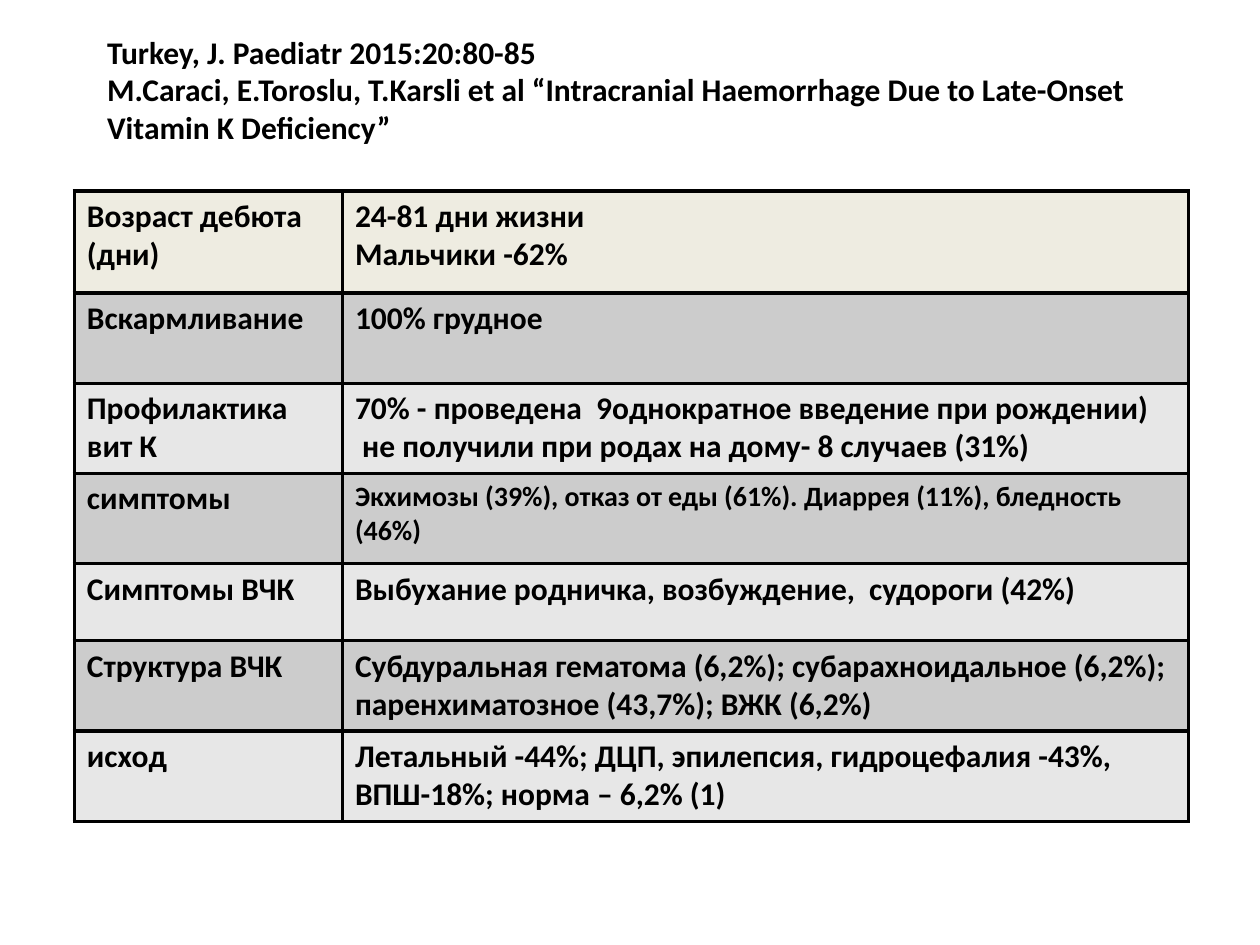
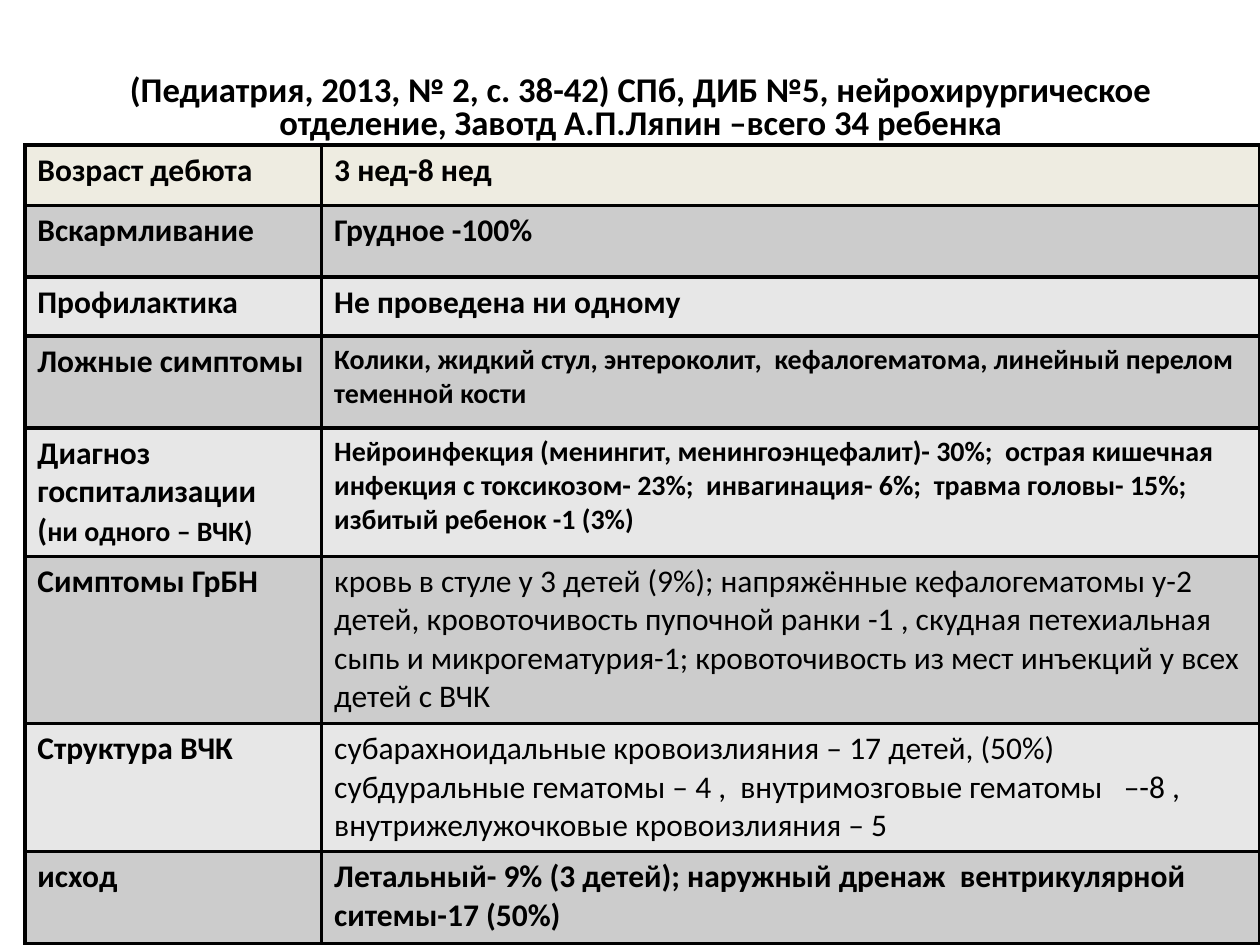
"""Build two slides of tables on late vitamin K deficiency bleeding."""
from lxml import etree
from pptx import Presentation
from pptx.dml.color import RGBColor
from pptx.enum.text import MSO_ANCHOR, MSO_AUTO_SIZE, PP_ALIGN
from pptx.oxml.ns import qn
from pptx.util import Pt

TOP, BOTTOM = MSO_ANCHOR.TOP, MSO_ANCHOR.BOTTOM
LEFT, CENTER = PP_ALIGN.LEFT, PP_ALIGN.CENTER
NO_FIT = MSO_AUTO_SIZE.NONE
TITLE_ONLY = 5
FONT, INK = "Calibri", "000000"
HEAD, BANDS = "EEECE1", ("CCCCCC", "E7E7E7")
BODY, SMALL, EDGE = 18, 16, 2.25


def color(code):
    return RGBColor.from_string(code)


class Deck:
    def __init__(self):
        self.prs = Presentation()
        self.prs.slide_width, self.prs.slide_height = Pt(720), Pt(540)
        self.slide = None

    def add_slide(self):
        layout = self.prs.slide_layouts[TITLE_ONLY]
        self.slide = self.prs.slides.add_slide(layout)

    def style(self, run, size, bold=True):
        font = run.font
        font.name, font.size, font.bold = FONT, Pt(size), bold
        font.color.rgb = color(INK)

    def title(self, text, box, size, align=LEFT, anchor=TOP, spacing=1, foot=3.6):
        shape = self.slide.shapes.title
        shape.left, shape.top, shape.width, shape.height = map(Pt, box)
        frame = shape.text_frame
        frame.text = text
        frame.word_wrap = True
        frame.auto_size = NO_FIT
        frame.vertical_anchor = anchor
        frame.margin_bottom = Pt(foot)
        for para in frame.paragraphs:
            para.alignment, para.line_spacing = align, spacing
            for run in para.runs:
                self.style(run, size)

    def border(self, cell):
        props = cell._tc.get_or_add_tcPr()
        for side in ("lnL", "lnR", "lnT", "lnB"):
            line = etree.SubElement(props, qn(f"a:{side}"), w=str(int(Pt(EDGE))))
            fill = etree.SubElement(line, qn("a:solidFill"))
            etree.SubElement(fill, qn("a:srgbClr"), val=INK)

    def cell(self, cell, fill, text, size=BODY, bold=True, tail=""):
        self.border(cell)
        cell.fill.solid()
        cell.fill.fore_color.rgb = color(fill)
        cell.text_frame.text = text
        for para in cell.text_frame.paragraphs:
            for run in para.runs:
                self.style(run, size, bold)
        if tail:
            run = cell.text_frame.paragraphs[-1].add_run()
            run.text = tail
            self.style(run, SMALL, bold)

    def table(self, left, top, widths, rows):
        heights = [row[0] for row in rows]
        frame = self.slide.shapes.add_table(
            len(rows), len(widths), Pt(left), Pt(top), Pt(sum(widths)), Pt(sum(heights)))
        grid = frame.table
        for col, width in zip(grid.columns, widths):
            col.width = Pt(width)
        for i, (height, label, value) in enumerate(rows):
            grid.rows[i].height = Pt(height)
            fill = BANDS[(i - 1) % 2] if i else HEAD
            for j, item in enumerate((label, value)):
                self.cell(grid.cell(i, j), fill, **item)


def bold(text, size=BODY, tail=""):
    return {"text": text, "size": size, "tail": tail}


def plain(text):
    return {"text": text, "bold": False}


TURKEY = [
    (58.2, bold("Возраст дебюта (дни)"), bold("24-81 дни жизни\nМальчики -62%")),
    (51.6, bold("Вскармливание"), bold("100% грудное")),
    (51.6, bold("Профилактика вит К"),
     bold("70% - проведена  9однократное введение при рождении)\n"
          " не получили при родах на дому- 8 случаев (31%)")),
    (51.6, bold("симптомы"),
     bold("Экхимозы (39%), отказ от еды (61%). Диаррея (11%), бледность (46%)", SMALL)),
    (44, bold("Симптомы ВЧК"), bold("Выбухание родничка, возбуждение,  судороги (42%)")),
    (51.6, bold("Структура ВЧК"),
     bold("Субдуральная гематома (6,2%); субарахноидальное (6,2%); "
          "паренхиматозное (43,7%); ВЖК (6,2%)")),
    (51.6, bold("исход"),
     bold("Летальный -44%; ДЦП, эпилепсия, гидроцефалия -43%, "
          "ВПШ-18%; норма – 6,2% (1)")),
]

RUSSIA = [
    (34.5, bold("Возраст дебюта"), bold("3 нед-8 нед")),
    (41, bold("Вскармливание"), bold("Грудное -100%")),
    (33.8, bold("Профилактика"), bold("Не проведена ни одному")),
    (52.6, bold("Ложные симптомы"),
     bold("Колики, жидкий стул, энтероколит,  кефалогематома, "
          "линейный перелом теменной кости", SMALL)),
    (73.2, bold("Диагноз госпитализации\n(", tail="ни одного – ВЧК)"),
     bold("Нейроинфекция (менингит, менингоэнцефалит)- 30%;  острая кишечная "
          "инфекция с токсикозом- 23%;  инвагинация- 6%;  травма головы- 15%; "
          "избитый ребенок -1 (3%)", SMALL)),
    (95.6, bold("Симптомы ГрБН"),
     plain("кровь в стуле у 3 детей (9%); напряжённые кефалогематомы у-2 детей, "
           "кровоточивость пупочной ранки -1 , скудная петехиальная сыпь и "
           "микрогематурия-1; кровоточивость из мест инъекций у всех детей с ВЧК")),
    (73.2, bold("Структура ВЧК"),
     plain("субарахноидальные кровоизлияния – 17 детей, (50%) "
           "субдуральные гематомы – 4 ,  внутримозговые гематомы   –-8 , "
           "внутрижелужочковые кровоизлияния – 5")),
    (52.6, bold("исход"),
     bold("Летальный- 9% (3 детей); наружный дренаж  вентрикулярной "
          "ситемы-17 (50%)")),
]


def main():
    deck = Deck()
    deck.add_slide()
    deck.title("Turkey, J. Paediatr 2015:20:80-85\n"
               "M.Caraci, E.Toroslu, T.Karsli et al “Intracranial Haemorrhage "
               "Due to Late-Onset Vitamin K Deficiency”",
               (54, 15, 618, 73), 18)
    deck.table(42.5, 109.2, (153.2, 483.6), TURKEY)

    deck.add_slide()
    deck.title("(Педиатрия, 2013, № 2, с. 38-42) СПб, ДИБ №5, нейрохирургическое "
               "отделение, Завотд А.П.Ляпин –всего 34 ребенка",
               (60, 15, 612, 73.5), 19.8, CENTER, BOTTOM, 0.8, 7)
    deck.table(14.2, 82.8, (169.6, 536.2), RUSSIA)
    deck.prs.save("out.pptx")


if __name__ == "__main__":
    main()
